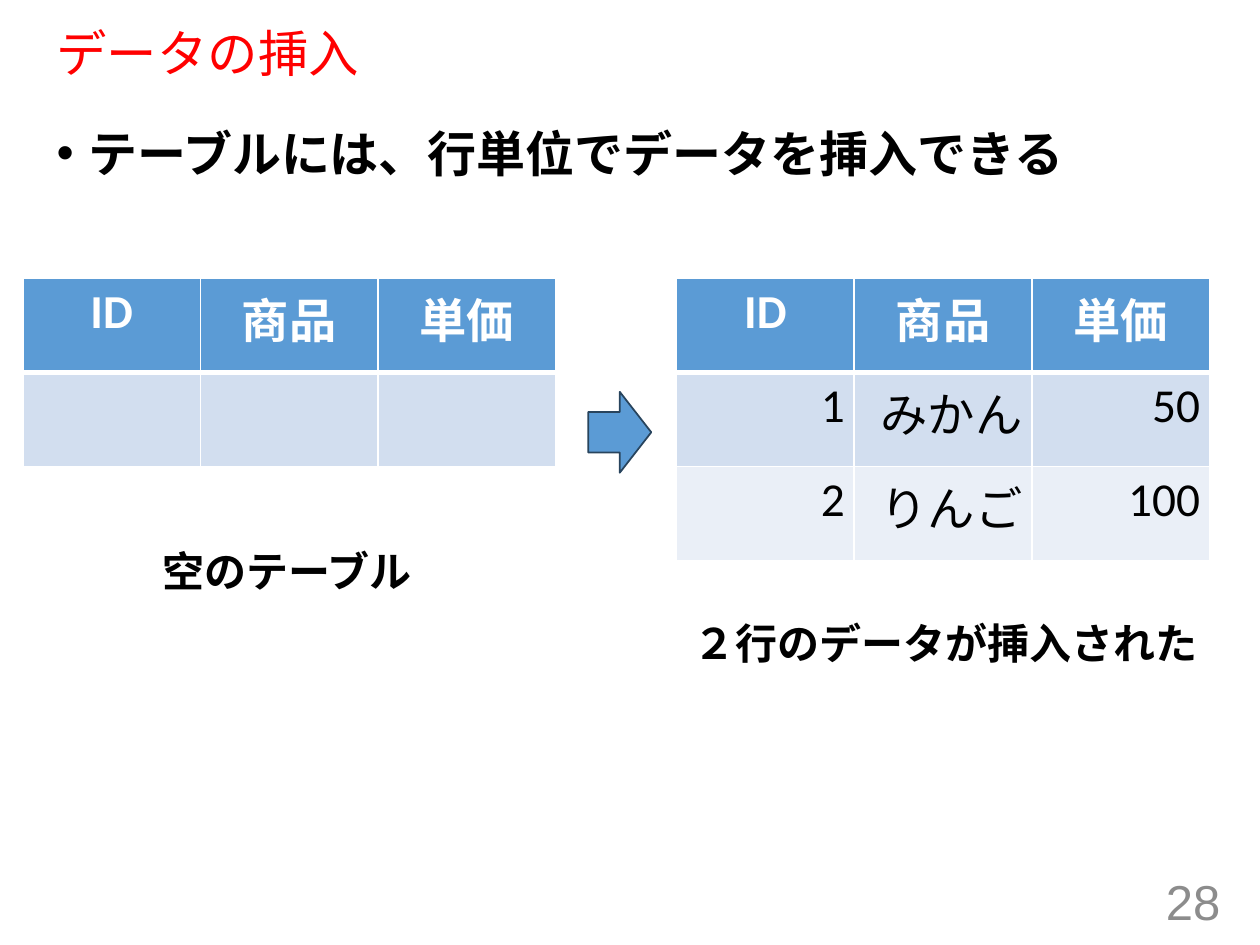
"""Build a slide that shows rows being inserted into an empty table."""
from lxml.etree import SubElement
from pptx import Presentation
from pptx.dml.color import RGBColor
from pptx.enum.shapes import MSO_SHAPE
from pptx.enum.text import MSO_ANCHOR as Anchor, MSO_AUTO_SIZE as AutoSize, PP_ALIGN as Align
from pptx.oxml.ns import qn
from pptx.util import Cm, Pt

RED = RGBColor(0xFF, 0x00, 0x00)
BLACK = RGBColor(0x00, 0x00, 0x00)
WHITE = RGBColor(0xFF, 0xFF, 0xFF)
GRAY = RGBColor(0x8C, 0x8C, 0x8C)
BLUE = RGBColor(0x5B, 0x9B, 0xD5)
NAVY = RGBColor(0x28, 0x44, 0x5D)
BANDS = [RGBColor(0xD2, 0xDE, 0xEF), RGBColor(0xEA, 0xEF, 0xF7)]

TITLE = "データの挿入"
MESSAGE = "テーブルには、行単位でデータを挿入できる"
PAGE_NUMBER = "28"
CAPTIONS = [
    ("空のテーブル", (3.02, 10.87, 5.64, 1.27)),
    ("２行のデータが挿入された", (13.74, 12.32, 10.77, 1.27)),
]
HEADER = ("ID", "商品", "単価")
TABLES = [
    (0.46, [HEADER, ("", "", "")]),
    (13.64, [HEADER, ("1", "みかん", "50"), ("2", "りんご", "100")]),
]
TABLE_TOP, COLUMN_WIDTH, ROW_HEIGHT = 5.61, 3.58, 1.9
ARROW_BOX = (11.86, 7.9, 1.27, 1.63)


def write(frame, text, size, color, font="Arial", bold=False, align=Align.LEFT):
    paragraph = frame.paragraphs[0]
    paragraph.alignment = align
    run = paragraph.add_run()
    run.text = text
    run.font.name = font
    run.font.size = Pt(size)
    run.font.bold = bold
    run.font.color.rgb = color
    return paragraph


def add_frame(slide, box, anchor=Anchor.TOP, wrap=True):
    frame = slide.shapes.add_textbox(*map(Cm, box)).text_frame
    frame.word_wrap = wrap
    frame.vertical_anchor = anchor
    return frame


def add_bullet(paragraph, indent):
    properties = paragraph._p.get_or_add_pPr()
    properties.set("marL", str(indent))
    properties.set("indent", str(-indent))
    SubElement(properties, qn("a:buFont"), typeface="Arial")
    SubElement(properties, qn("a:buChar"), char="•")


def add_borders(cell, widths):
    properties = cell._tc.get_or_add_tcPr()
    for side, width in widths.items():
        line = SubElement(properties, qn(f"a:ln{side}"), w=str(Pt(width)))
        fill = SubElement(line, qn("a:solidFill"))
        SubElement(fill, qn("a:srgbClr"), val=str(WHITE))


def add_table(slide, left, rows):
    columns = len(rows[0])
    table = slide.shapes.add_table(
        len(rows), columns, Cm(left), Cm(TABLE_TOP),
        Cm(COLUMN_WIDTH * columns), Cm(ROW_HEIGHT * len(rows)),
    ).table
    for row_index, row in enumerate(rows):
        is_header = row_index == 0
        for column_index, text in enumerate(row):
            cell = table.cell(row_index, column_index)
            cell.margin_left = cell.margin_right = Cm(0.19)
            cell.margin_top = cell.margin_bottom = Cm(0.1)
            add_borders(cell, {"L": 1, "R": 1, "T": 3 if row_index == 1 else 1,
                               "B": 3 if is_header else 1})
            cell.fill.solid()
            cell.fill.fore_color.rgb = BLUE if is_header else BANDS[(row_index - 1) % 2]
            if text:
                write(cell.text_frame, text, 27, WHITE if is_header else BLACK, font="Calibri",
                      bold=is_header, align=Align.CENTER if is_header else Align.RIGHT)


def add_arrow(slide):
    arrow = slide.shapes.add_shape(MSO_SHAPE.RIGHT_ARROW, *map(Cm, ARROW_BOX))
    arrow.shadow.inherit = False
    arrow.fill.solid()
    arrow.fill.fore_color.rgb = BLUE
    arrow.line.color.rgb = NAVY
    arrow.line.width = Pt(1)


def main():
    presentation = Presentation()
    presentation.slide_width, presentation.slide_height = Cm(25.4), Cm(19.05)
    slide = presentation.slides.add_slide(presentation.slide_layouts[6])

    title = write(add_frame(slide, (0.89, 0.48, 23.5, 1.3), Anchor.MIDDLE), TITLE, 28.8, RED)
    title.line_spacing = 0.9
    message = write(add_frame(slide, (0.89, 2.36, 23.5, 14.81)), MESSAGE, 28, BLACK, bold=True)
    message.space_before = Pt(10)
    add_bullet(message, Cm(0.64))
    write(add_frame(slide, (19.13, 17.65, 5.72, 1.02), Anchor.MIDDLE), PAGE_NUMBER, 28, GRAY,
          align=Align.RIGHT)
    for text, box in CAPTIONS:
        frame = add_frame(slide, box, wrap=False)
        frame.auto_size = AutoSize.SHAPE_TO_FIT_TEXT
        write(frame, text, 24, BLACK, font="Calibri", bold=True)
    for left, rows in TABLES:
        add_table(slide, left, rows)
    add_arrow(slide)
    presentation.save("out.pptx")


if __name__ == "__main__":
    main()
